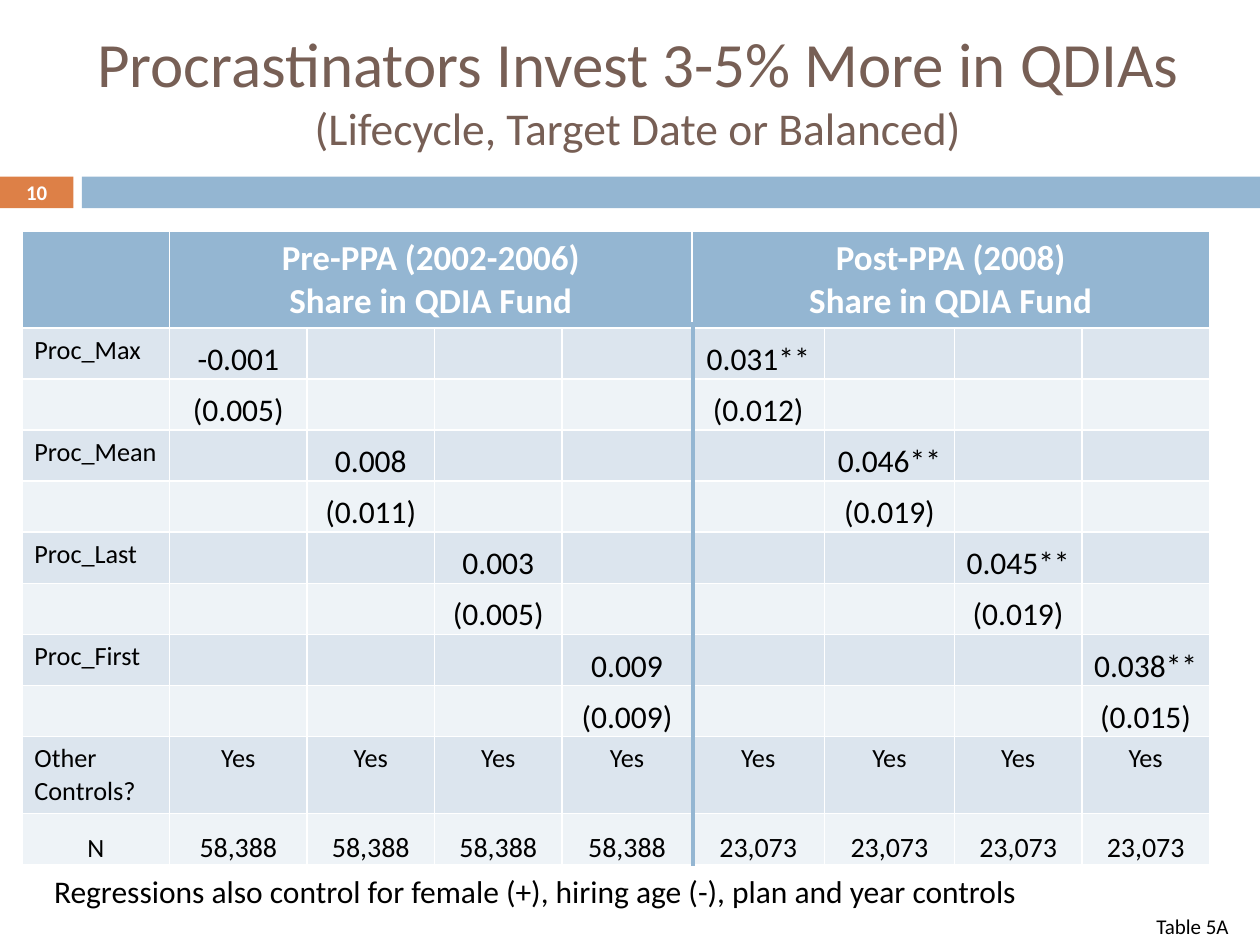
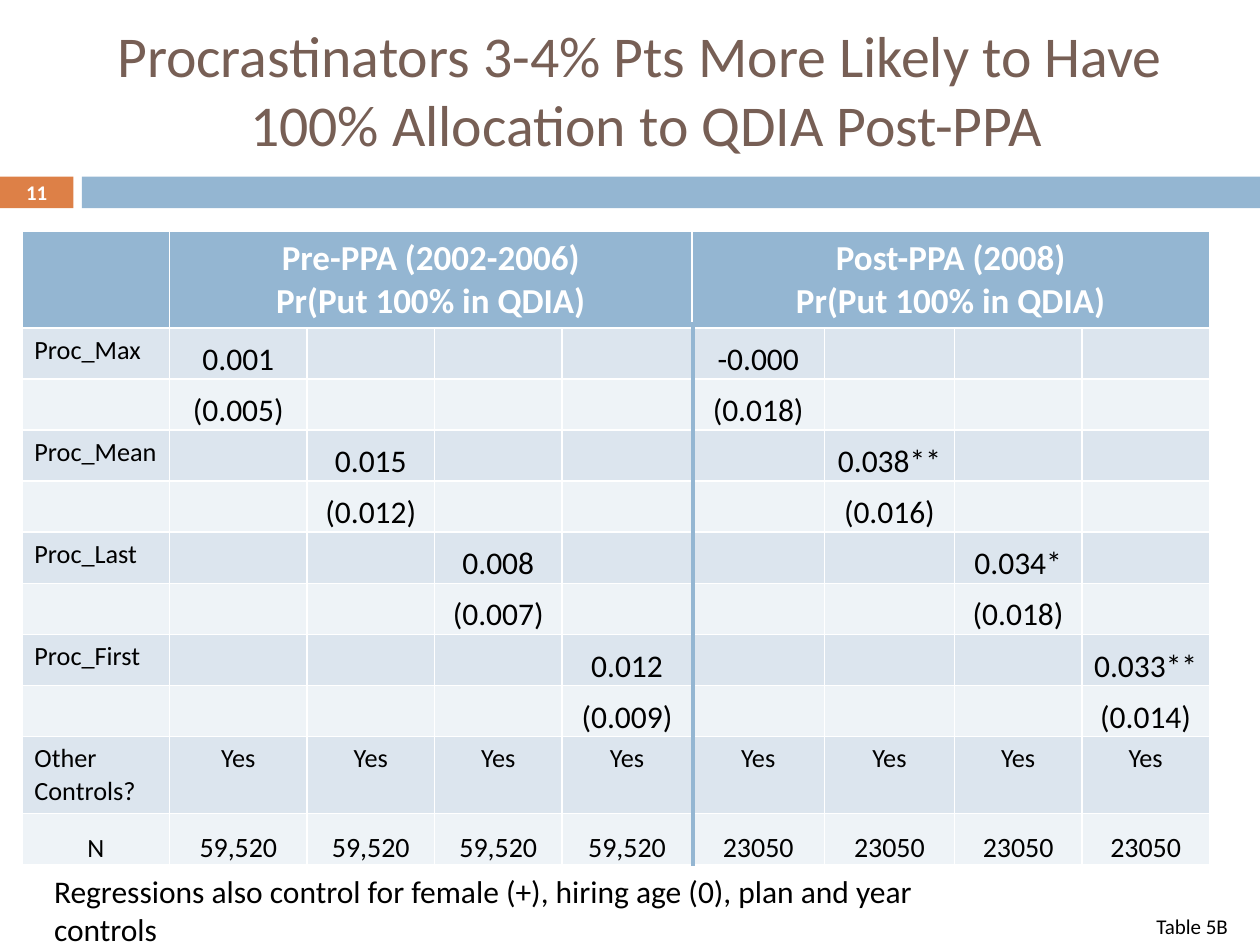
"""Build two regression-table slides on procrastinators and QDIA investing."""
from pptx import Presentation
from pptx import util as u
from pptx.dml.color import RGBColor
from pptx.enum import shapes, text
from pptx.oxml import parse_xml
from pptx.oxml.ns import nsdecls

FONT = "Calibri"
BLUE = RGBColor(0x94, 0xB6, 0xD2)
ORANGE = RGBColor(0xDD, 0x80, 0x47)
BROWN = RGBColor(0x77, 0x5F, 0x55)
WHITE = RGBColor(0xFF, 0xFF, 0xFF)
BLACK = RGBColor(0, 0, 0)
ROW_FILLS = [RGBColor(0xDC, 0xE5, 0xEE), RGBColor(0xEE, 0xF3, 0xF7)]

FIRST_NUMBER = 10
MEASURES = ["Proc_Max", "Proc_Mean", "Proc_Last", "Proc_First"]
PERIODS = ["Pre-PPA (2002-2006)", "Post-PPA (2008)"]
COLUMN_WIDTHS = [2.98, 2.77, 2.57, 2.57, 2.62, 2.67, 2.62, 2.57, 2.57]
ROW_HEIGHTS = [1.94] + [1.03] * 8 + [1.55, 1.03]

SLIDES = [
    {
        "title": [("Procrastinators Invest 3-5% More in QDIAs", 36),
                  ("(Lifecycle, Target Date or Balanced)", 26)],
        "title_box": (0.43, 0.43, 24.87, 2.74),
        "outcome": "Share in QDIA Fund",
        "estimates": [
            [("-0.001", "(0.005)"), ("0.008", "(0.011)"),
             ("0.003", "(0.005)"), ("0.009", "(0.009)")],
            [("0.031**", "(0.012)"), ("0.046**", "(0.019)"),
             ("0.045**", "(0.019)"), ("0.038**", "(0.015)")],
        ],
        "counts": ["58,388", "23,073"],
        "note": "Regressions also control for female (+), hiring age (-), plan and year controls",
        "note_width": 20.02,
        "label": "Table 5A",
    },
    {
        "title": [("Procrastinators 3-4% Pts More Likely to Have ", 33),
                  ("100% Allocation to QDIA Post-PPA", 33)],
        "title_box": (1.7, 0.43, 22.66, 2.74),
        "outcome": "Pr(Put 100% in QDIA)",
        "estimates": [
            [("0.001", "(0.005)"), ("0.015", "(0.012)"),
             ("0.008", "(0.007)"), ("0.012", "(0.009)")],
            [("-0.000", "(0.018)"), ("0.038**", "(0.016)"),
             ("0.034*", "(0.018)"), ("0.033**", "(0.014)")],
        ],
        "counts": ["59,520", "23050"],
        "note": "Regressions also control for female (+), hiring age (0), plan and year controls",
        "note_width": 20.02,
        "label": "Table 5B",
    },
]


def box(values):
    return [u.Cm(value) for value in values]


def write(frame, lines, color, bold=False, align=text.PP_ALIGN.CENTER):
    """Fill a text frame with (wording, size) paragraphs."""
    frame.text = "\n".join(wording for wording, size in lines)
    for paragraph, (wording, size) in zip(frame.paragraphs, lines):
        paragraph.alignment = align
        for run in paragraph.runs:
            run.font.name = FONT
            run.font.size = u.Pt(size)
            run.font.bold = bold
            run.font.color.rgb = color


def add_text(slide, position, lines, color, bold=False):
    frame = slide.shapes.add_textbox(*box(position)).text_frame
    frame.word_wrap = True
    frame.vertical_anchor = text.MSO_ANCHOR.MIDDLE
    write(frame, lines, color, bold)


def add_caption(slide, position, wording, size):
    frame = slide.shapes.add_textbox(*box(position)).text_frame
    frame.word_wrap = False
    frame.auto_size = text.MSO_AUTO_SIZE.SHAPE_TO_FIT_TEXT
    write(frame, [(wording, size)], BLACK, align=text.PP_ALIGN.LEFT)


def add_band(slide, number):
    for left, width, color in [(0, 1.48, ORANGE), (1.65, 23.75, BLUE)]:
        band = slide.shapes.add_shape(
            shapes.MSO_SHAPE.RECTANGLE, *box((left, 3.56, width, 0.64)))
        band.shadow.inherit = False
        band.fill.solid()
        band.fill.fore_color.rgb = color
        band.line.fill.background()
    add_text(slide, (0, 3.53, 1.48, 0.69), [(str(number), 11.9)], WHITE, True)


def write_number(cell, wording, size):
    """Set a centred value at the foot of its cell."""
    cell.vertical_anchor = text.MSO_ANCHOR.BOTTOM
    cell.margin_left = cell.margin_right = cell.margin_top = u.Cm(0.02)
    cell.margin_bottom = 0
    write(cell.text_frame, [(wording, size)], BLACK)


def add_results(slide, content):
    table = slide.shapes.add_table(
        len(ROW_HEIGHTS), len(COLUMN_WIDTHS),
        *box((0.44, 4.66, sum(COLUMN_WIDTHS), sum(ROW_HEIGHTS)))).table
    for column, width in zip(table.columns, COLUMN_WIDTHS):
        column.width = u.Cm(width)
    for index, (row, height) in enumerate(zip(table.rows, ROW_HEIGHTS)):
        row.height = u.Cm(height)
        for cell in row.cells:
            cell.fill.solid()
            cell.fill.fore_color.rgb = ROW_FILLS[(index - 1) % 2] if index else BLUE

    controls_row, count_row = len(ROW_HEIGHTS) - 2, len(ROW_HEIGHTS) - 1
    for index, name in enumerate(MEASURES + ["Other Controls?"]):
        write(table.cell(1 + 2 * index, 0).text_frame, [(name, 15)], BLACK,
              align=text.PP_ALIGN.LEFT)
    write_number(table.cell(count_row, 0), "N", 15)

    for index, period in enumerate(PERIODS):
        first = 1 + index * len(MEASURES)
        header = table.cell(0, first)
        header.merge(table.cell(0, first + len(MEASURES) - 1))
        write(header.text_frame, [(period, 20), (content["outcome"], 20)], WHITE, True)
        for offset, pair in enumerate(content["estimates"][index]):
            column = first + offset
            for step, wording in enumerate(pair):
                write_number(table.cell(1 + 2 * offset + step, column), wording, 18)
            write(table.cell(controls_row, column).text_frame, [("Yes", 15)], BLACK)
            write_number(table.cell(count_row, column), content["counts"][index], 16)


def add_period_divider(slide):
    divider = slide.shapes.add_connector(
        shapes.MSO_CONNECTOR.STRAIGHT, *box((13.97, 6.5, 13.97, 17.45)))
    divider.line.color.rgb = BLUE
    divider.line.width = u.Pt(2.5)
    divider.element.spPr.append(parse_xml(f"<a:effectLst {nsdecls('a')}/>"))


def main():
    presentation = Presentation()
    presentation.slide_width, presentation.slide_height = box((25.4, 19.05))
    for number, content in enumerate(SLIDES, FIRST_NUMBER):
        slide = presentation.slides.add_slide(presentation.slide_layouts[6])
        add_band(slide, number)
        add_text(slide, content["title_box"], content["title"], BROWN)
        add_results(slide, content)
        add_caption(slide, (0.84, 17.45, content["note_width"], 1.02), content["note"], 18)
        add_caption(slide, (23.06, 18.29, 2.03, 0.76), content["label"], 12)
        add_period_divider(slide)
    presentation.save("out.pptx")


if __name__ == "__main__":
    main()
